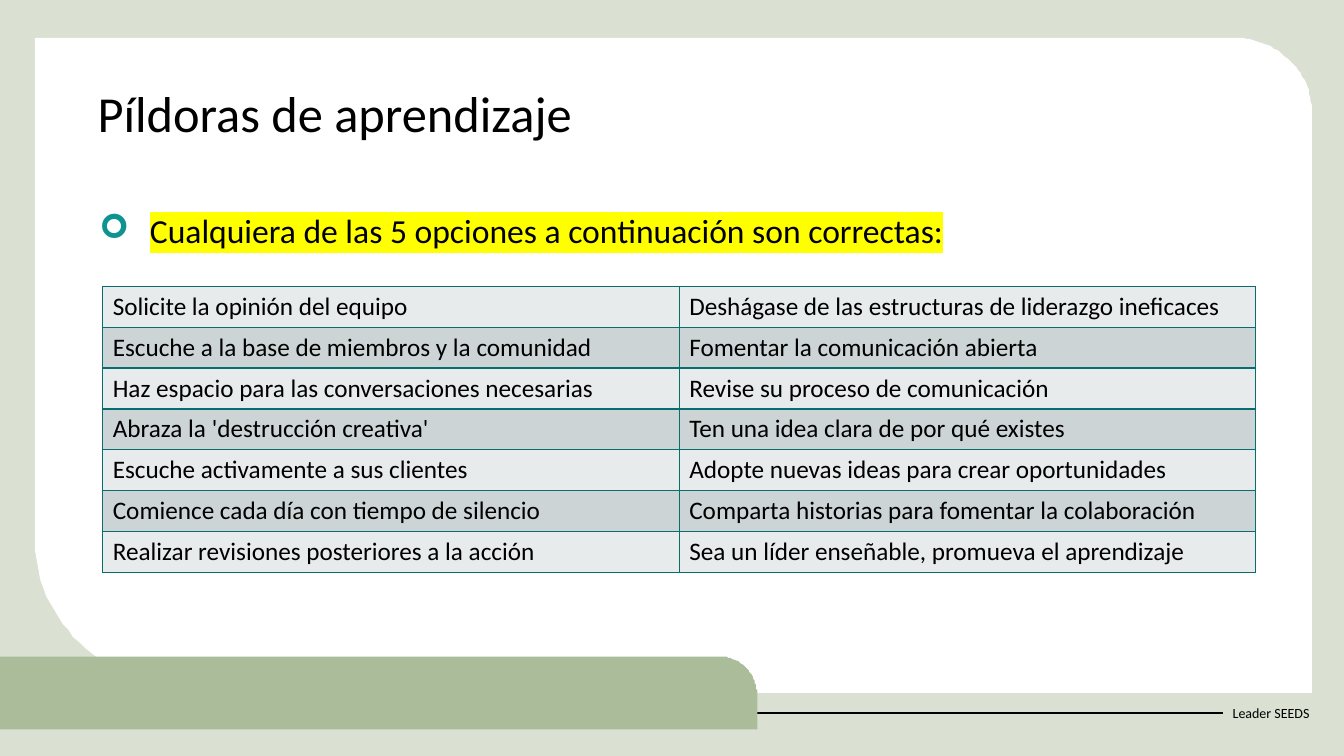
import math
from lxml import etree
from pptx import Presentation, util as u
from pptx.dml.color import RGBColor
from pptx.enum import shapes, text
from pptx.oxml.ns import qn

Pt = u.Pt
FONT = "Calibri"
COLORS = {
    "back": "DAE0D2", "panel": "FFFFFF", "bar": "AABC99", "ink": "000000",
    "mark": "FFFF00", "bullet": "0D9390", "edge": "086D6E",
    "light": "E7EBEB", "dark": "CCD4D5",
}
TITLE = "Píldoras de aprendizaje"
LEAD = "Cualquiera de las 5 opciones a continuación son correctas:"
FOOT = "Leader SEEDS"
TIPS = [
    ("Solicite la opinión del equipo",
     "Deshágase de las estructuras de liderazgo ineficaces"),
    ("Escuche a la base de miembros y la comunidad",
     "Fomentar la comunicación abierta"),
    ("Haz espacio para las conversaciones necesarias",
     "Revise su proceso de comunicación"),
    ("Abraza la 'destrucción creativa'",
     "Ten una idea clara de por qué existes"),
    ("Escuche activamente a sus clientes",
     "Adopte nuevas ideas para crear oportunidades"),
    ("Comience cada día con tiempo de silencio",
     "Comparta historias para fomentar la colaboración"),
    ("Realizar revisiones posteriores a la acción",
     "Sea un líder enseñable, promueva el aprendizaje"),
]
WIDE, HIGH = 960, 540
PANEL = (25.2, 26.6, 936.7, 494.6)  # left, top, right, bottom
BAR = (0, 468.7, 540.7, 520.6)
TABLE = (73.4, 204.5, 823.6, 204.4)  # left, top, width, height


def rgb(name):
    return RGBColor.from_string(COLORS[name])


def paint(shape, name):
    shape.shadow.inherit = False
    shape.fill.solid()
    shape.fill.fore_color.rgb = rgb(name)
    shape.line.fill.background()


def arc(x, y, rx, ry, start):
    """Points of a clockwise quarter ellipse about (x, y)."""
    turns = [math.radians(start + 3 * i) for i in range(31)]
    return [(x + rx * math.cos(t), y + ry * math.sin(t)) for t in turns]


def outline(slide, points, name):
    build = slide.shapes.build_freeform(*points[0], scale=Pt(1))
    build.add_line_segments(points[1:], close=True)
    paint(build.convert_to_shape(), name)


def style(font, size):
    for key, value in {"name": FONT, "size": Pt(size)}.items():
        setattr(font, key, value)
    font.color.rgb = rgb("ink")


def write(slide, box, words, size, anchor=text.MSO_ANCHOR.TOP, space=0.9):
    frame = slide.shapes.add_textbox(*map(Pt, box)).text_frame
    frame.word_wrap = True
    frame.vertical_anchor = anchor
    para = frame.paragraphs[0]
    para.line_spacing = space
    run = para.add_run()
    run.text = words
    style(run.font, size)
    return para


def tint(parent, tag, name):
    node = etree.SubElement(parent, qn(tag))
    etree.SubElement(node, qn("a:srgbClr"), val=COLORS[name])
    return node


def add_bullet(para):
    props = para._p.get_or_add_pPr()
    props.set("marL", str(Pt(37.4)))
    props.set("indent", str(Pt(-36)))
    tint(props, "a:buClr", "bullet")
    etree.SubElement(props, qn("a:buFont"), typeface="Wingdings")
    etree.SubElement(props, qn("a:buChar"), char="➢")


def highlight(run):
    props = run._r.get_or_add_rPr()
    props.find(qn("a:solidFill")).addnext(tint(props, "a:highlight", "mark"))


def add_edges(cell):
    props = cell._tc.get_or_add_tcPr()
    for i, side in enumerate(("L", "R", "T", "B")):
        line = etree.Element(qn("a:ln" + side), w=str(Pt(1)))
        tint(line, "a:solidFill", "edge")
        props.insert(i, line)


def add_tips(slide):
    rows, cols = len(TIPS), len(TIPS[0])
    grid = slide.shapes.add_table(rows, cols, *map(Pt, TABLE)).table
    for r, tips in enumerate(TIPS):
        grid.rows[r].height = Pt(TABLE[3] / rows)
        for c, tip in enumerate(tips):
            cell = grid.cell(r, c)
            cell.text = tip
            style(cell.text_frame.paragraphs[0].runs[0].font, 18)
            cell.fill.solid()
            cell.fill.fore_color.rgb = rgb("dark" if r % 2 else "light")
            add_edges(cell)
    grid.first_row = False


def add_frame(slide):
    back = slide.shapes.add_shape(
        shapes.MSO_SHAPE.RECTANGLE, 0, 0, Pt(WIDE), Pt(HIGH))
    paint(back, "back")

    left, top, right, base = PANEL
    outline(slide, [(left, top)]
            + arc(right - 58.3, top + 51.1, 58.3, 51.1, 270)
            + [(right, base)]
            + arc(left + 122.4, base - 107.3, 122.4, 107.3, 90), "panel")

    write(slide, (873.4, 494.6, 72.7, 28.8), FOOT, 10,
          text.MSO_ANCHOR.MIDDLE, 1)
    rule = slide.shapes.add_connector(
        shapes.MSO_CONNECTOR.STRAIGHT, 0, Pt(509), Pt(873.4), Pt(509))
    rule.line.color.rgb = rgb("ink")
    rule.line.width = Pt(1.5)
    etree.SubElement(rule._element.spPr, qn("a:effectLst"))

    left, top, right, base = BAR
    outline(slide, [(left, base), (left, top)]
            + arc(right - 27.5, top + 27.5, 27.5, 27.5, 270)
            + [(right, base)], "bar")


def main():
    deck = Presentation()
    deck.slide_width, deck.slide_height = Pt(WIDE), Pt(HIGH)
    slide = deck.slides.add_slide(deck.slide_layouts[6])
    add_frame(slide)
    write(slide, (62.6, 59.8, 834.5, 63.4), TITLE, 36)
    lead = write(slide, (62.6, 149.8, 834.5, 314.6), LEAD, 24)
    add_bullet(lead)
    highlight(lead.runs[0])
    add_tips(slide)
    deck.save("out.pptx")


if __name__ == "__main__":
    main()
